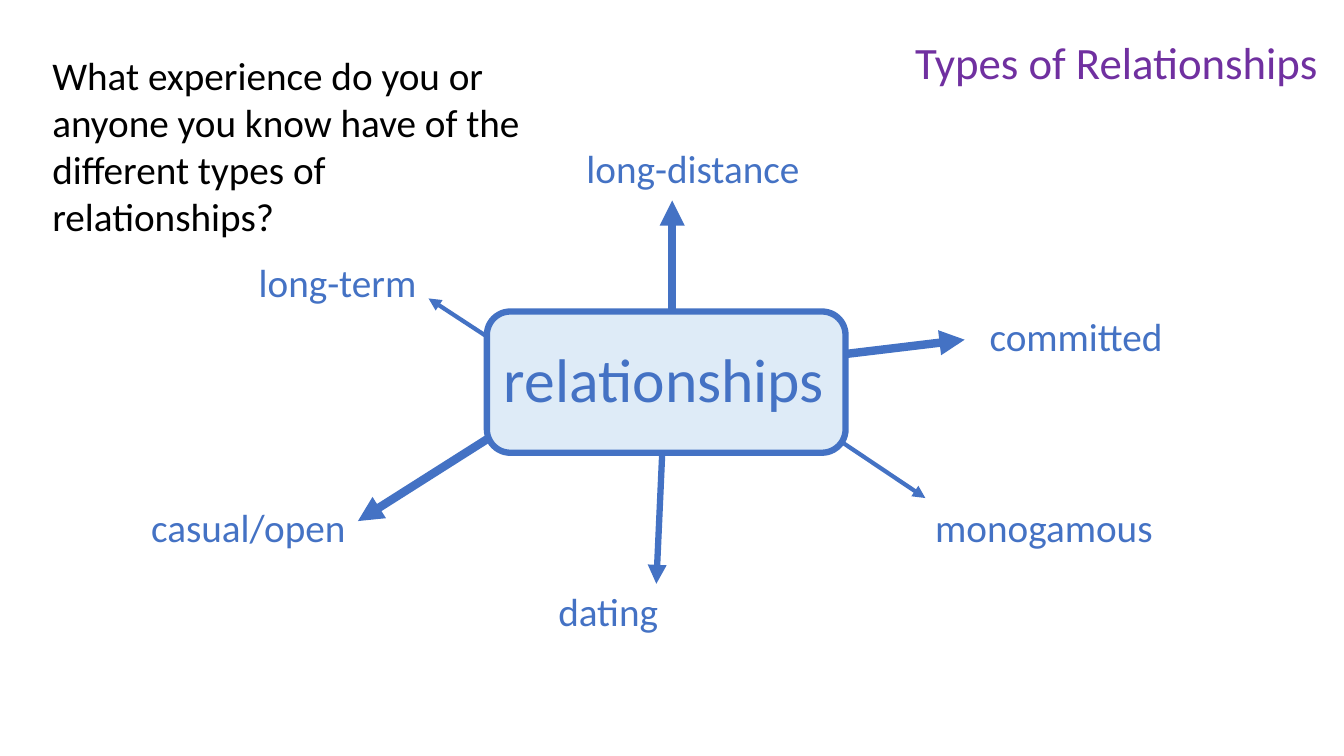
"""Build a mind-map slide about types of relationships."""
import dataclasses

import lxml.etree
import pptx
import pptx.dml.color
import pptx.enum.shapes
import pptx.enum.text
import pptx.oxml.ns
import pptx.shapes.connector
import pptx.slide
import pptx.util

Cm = pptx.util.Cm
COLORS = {"blue": "4472C4", "pale": "DEEBF7", "purple": "7030A0", "black": "000000"}
FONT = "Calibri"
LABEL_HEIGHT = 1.45


@dataclasses.dataclass(frozen=True)
class Label:
    text: str
    left: float
    top: float
    width: float
    height: float = LABEL_HEIGHT
    size: int = 28
    color: str = "blue"
    wrap: bool = False


@dataclasses.dataclass(frozen=True)
class Branch:
    label: Label
    start: tuple[float, float]
    end: tuple[float, float]
    weight: float


QUESTION = Label(
    "What experience do you or anyone you know have of the different types of relationships?",
    1.07, 1.17, 12.7, 5.05, color="black", wrap=True,
)
TOPIC = Label("relationships", 12.45, 8.46, 8.69, 2.13, size=44)
TITLE = Label("Types of Relationships", 22.81, 0.74, 11.05, 1.63, 32, "purple", True)

BRANCHES = [
    Branch(Label("long-term", 6.27, 6.38, 4.52), (12.27, 8.48), (10.8, 7.52), 3),
    Branch(Label("monogamous", 23.32, 12.55, 6.12), (21.23, 11.15), (23.32, 12.55), 3),
    Branch(Label("long-distance", 14.53, 3.51, 5.94), (16.94, 7.82), (16.94, 5.05), 6),
    Branch(Label("casual/open", 3.56, 12.55, 5.46), (12.27, 11.07), (9.02, 13.13), 6),
    Branch(Label("committed", 24.69, 7.75, 4.93), (21.31, 8.92), (24.31, 8.56), 6),
    Branch(Label("dating", 13.82, 14.68, 3.05), (16.69, 11.38), (16.54, 14.71), 4.5),
]


def rgb(name: str) -> pptx.dml.color.RGBColor:
    return pptx.dml.color.RGBColor.from_string(COLORS[name])


def draw_label(slide: pptx.slide.Slide, label: Label) -> None:
    textbox = slide.shapes.add_textbox(
        Cm(label.left), Cm(label.top), Cm(label.width), Cm(label.height)
    )
    frame = textbox.text_frame
    frame.text = label.text
    frame.word_wrap = label.wrap
    frame.auto_size = pptx.enum.text.MSO_AUTO_SIZE.SHAPE_TO_FIT_TEXT
    font = frame.paragraphs[0].runs[0].font
    font.name = FONT
    font.size = pptx.util.Pt(label.size)
    font.color.rgb = rgb(label.color)


def draw_topic_box(slide: pptx.slide.Slide) -> None:
    topic_box = slide.shapes.add_shape(
        pptx.enum.shapes.MSO_SHAPE.ROUNDED_RECTANGLE,
        Cm(12.27), Cm(7.85), Cm(9.04), Cm(3.56),
    )
    topic_box.shadow.inherit = False
    topic_box.fill.solid()
    topic_box.fill.fore_color.rgb = rgb("pale")
    topic_box.line.color.rgb = rgb("blue")
    topic_box.line.width = pptx.util.Pt(4.5)


def draw_arrow(slide: pptx.slide.Slide, branch: Branch) -> pptx.shapes.connector.Connector:
    arrow = slide.shapes.add_connector(
        pptx.enum.shapes.MSO_CONNECTOR.STRAIGHT,
        *(Cm(value) for value in branch.start + branch.end),
    )
    arrow.line.color.rgb = rgb("blue")
    arrow.line.width = pptx.util.Pt(branch.weight)
    qn = pptx.oxml.ns.qn
    outline = arrow.line._get_or_add_ln()
    lxml.etree.SubElement(outline, qn("a:tailEnd")).set("type", "triangle")
    lxml.etree.SubElement(arrow._element.spPr, qn("a:effectLst"))
    return arrow


def main() -> None:
    presentation = pptx.Presentation()
    presentation.slide_width = Cm(33.87)
    presentation.slide_height = Cm(19.05)
    slide = presentation.slides.add_slide(presentation.slide_layouts[6])

    draw_topic_box(slide)
    draw_label(slide, QUESTION)
    draw_label(slide, TOPIC)
    for branch in BRANCHES:
        draw_arrow(slide, branch)
        draw_label(slide, branch.label)
    draw_label(slide, TITLE)

    presentation.save("out.pptx")


if __name__ == "__main__":
    main()
